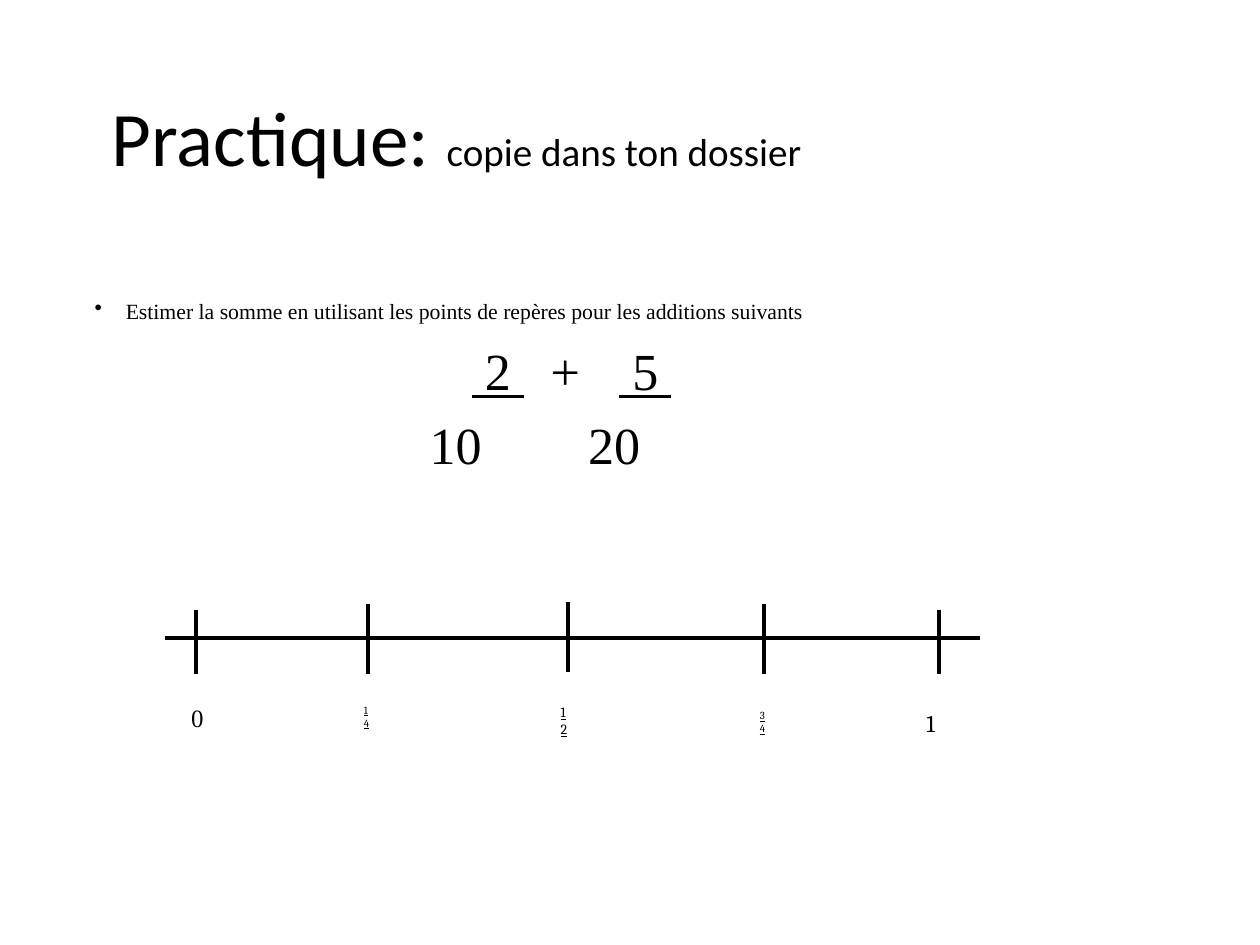
from dataclasses import dataclass

from lxml import etree
from pptx import Presentation
from pptx import util as u
from pptx.dml.color import RGBColor
from pptx.enum import shapes, text
from pptx.oxml import ns

COLORS = {"ink": "000000", "paper": "FFFFFF"}
SERIF = "Times New Roman"
INK = RGBColor.from_string(COLORS["ink"])


@dataclass
class Label:
    lines: list[str]
    left: float
    top: float
    width: float
    height: float
    size: float
    font: str = SERIF
    underline: bool = False
    inset: bool = True


@dataclass
class Line:
    x1: float
    y1: float
    x2: float
    y2: float


def add_label(slide, label: Label):
    box = slide.shapes.add_textbox(
        u.Inches(label.left), u.Inches(label.top),
        u.Inches(label.width), u.Inches(label.height))
    frame = box.text_frame
    frame.word_wrap = True
    if not label.inset:
        frame.margin_left = frame.margin_right = 0
        frame.margin_top = frame.margin_bottom = 0
    for index, line in enumerate(label.lines):
        paragraph = frame.paragraphs[0] if index == 0 else frame.add_paragraph()
        paragraph.add_run().text = line
        paragraph.font.name = label.font
        paragraph.font.size = u.Pt(label.size)
        paragraph.font.color.rgb = INK
        paragraph.font.underline = label.underline
    return frame


def add_line(slide, line: Line) -> None:
    connector = slide.shapes.add_connector(
        shapes.MSO_CONNECTOR.STRAIGHT, u.Inches(line.x1), u.Inches(line.y1),
        u.Inches(line.x2), u.Inches(line.y2))
    connector.line.color.rgb = INK
    connector.line.width = u.Pt(3)
    etree.SubElement(connector._element.spPr, ns.qn("a:effectLst"))


def add_bullet(paragraph, indent: float) -> None:
    properties = paragraph._p.get_or_add_pPr()
    properties.set("marL", str(u.Inches(indent)))
    properties.set("indent", str(-u.Inches(indent)))
    bullet = etree.Element(ns.qn("a:buChar"), char="•")
    properties.insert_element_before(bullet, "a:tabLst", "a:defRPr", "a:extLst")


def main() -> None:
    deck = Presentation()
    deck.slide_width, deck.slide_height = u.Inches(16.13), u.Inches(12.1)
    slide = deck.slides.add_slide(deck.slide_layouts[6])
    slide.background.fill.solid()
    slide.background.fill.fore_color.rgb = RGBColor.from_string(COLORS["paper"])

    # Title with a smaller note beside it
    title = add_label(slide, Label([" Practique: "], 1.11, 0.64, 13.91, 2.34, 71, "Calibri"))
    title.vertical_anchor = text.MSO_ANCHOR.MIDDLE
    title.paragraphs[0].line_spacing = 0.9
    note = title.paragraphs[0].add_run()
    note.text = "copie dans ton dossier"
    note.font.size = u.Pt(36)

    # Instruction
    instruction = add_label(slide, Label(
        ["Estimer la somme en utilisant les points de repères pour les additions suivants"],
        1.21, 3.81, 13.71, 0.4, 20, inset=False))
    add_bullet(instruction.paragraphs[0], 0.4)

    # Sum of two fractions
    numerator_top, denominator_top = 4.34, 5.28
    for term, left, top, underline in [
        (" 2 ", 6.04, numerator_top, True),
        ("+", 7.05, numerator_top, False),
        (" 5 ", 7.93, numerator_top, True),
        ("10", 5.5, denominator_top, False),
        ("20", 7.53, denominator_top, False),
    ]:
        add_label(slide, Label([term], left, top, 0.8, 0.8, 48,
                               underline=underline, inset=False))

    # Number line and its ticks
    add_line(slide, Line(2.11, 8.17, 12.55, 8.17))
    for x, top, bottom in [(2.51, 7.81, 8.63), (4.71, 7.74, 8.63), (7.27, 7.71, 8.6),
                           (9.78, 7.74, 8.63), (12.02, 7.81, 8.63)]:
        add_line(slide, Line(x, top, x, bottom))

    # Benchmarks under the ticks
    for benchmark in [
        Label(["0"], 2.35, 8.95, 1.16, 1.16, 23),
        Label(["1", "4"], 4.56, 8.96, 0.59, 1.04, 10, "Cambria", True),
        Label(["1", "2"], 7.08, 8.96, 0.72, 1.28, 13, "Cambria", True),
        Label(["3", "4"], 9.63, 9.03, 0.59, 1.04, 10, "Cambria", True),
        Label(["1"], 11.76, 9.03, 1.09, 1.12, 22, "Cambria"),
    ]:
        add_label(slide, benchmark)

    deck.save("out.pptx")


if __name__ == "__main__":
    main()
